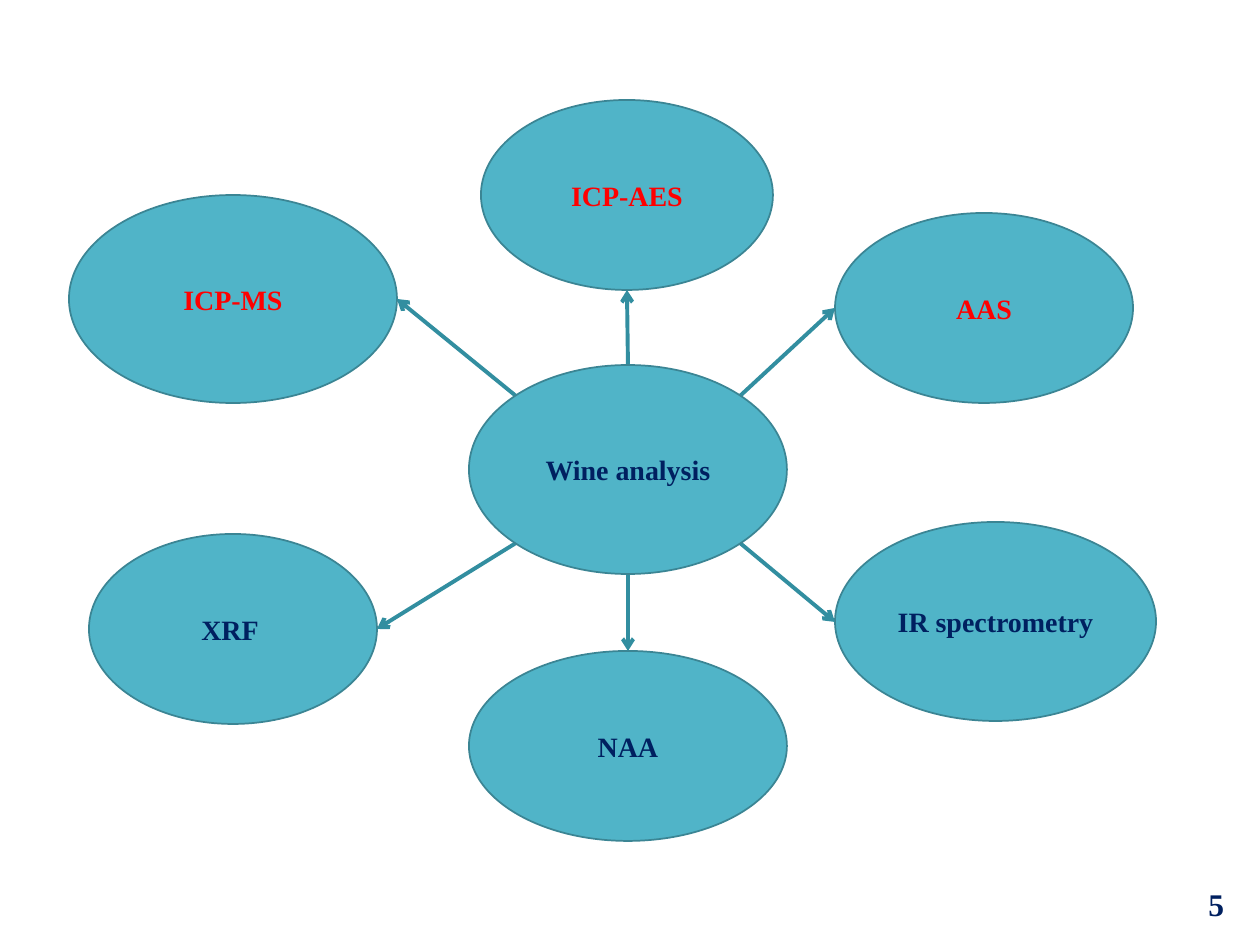
"""Builds a hub-and-spoke slide of wine analysis methods."""
from math import sqrt

from lxml.etree import SubElement
from pptx import Presentation
from pptx.dml.color import RGBColor as Color
from pptx.enum.shapes import MSO_CONNECTOR as Connector, MSO_SHAPE as Shape
from pptx.enum.text import MSO_ANCHOR as Anchor, MSO_AUTO_SIZE as AutoSize, PP_ALIGN as Align
from pptx.oxml.ns import qn
from pptx.util import Emu, Pt

COLOURS = {"fill": "50B4C8", "edge": "3B8594", "arrow": "328EA0", "navy": "002060", "red": "FF0000"}
HUB = (469, 365, 318, 209)
METHODS = [
    ("NAA", "navy", (469, 651, 318, 190), (0, 1)),
    ("XRF ", "navy", (89, 534, 288, 190), (-1, 1)),
    ("AAS", "red", (835, 213, 298, 190), (1, -1)),
    ("ICP-AES", "red", (481, 100, 292, 190), (0, -1)),
    ("ICP-MS", "red", (69, 195, 328, 208), (-1, -1)),
    ("IR spectrometry", "navy", (835, 522, 321, 199), (1, 1)),
]


def px(length):
    return Emu(round(length * 914400 / 126))


def colour(name):
    return Color.from_string(COLOURS[name])


def rim_point(frame, across, down):
    left, top, width, height = frame
    reach = sqrt(across**2 + down**2) * 2
    return round(left + width / 2 + across * width / reach), round(top + height / 2 + down * height / reach)


class Diagram:
    def __init__(self, deck):
        self.font = "Times New Roman"
        self.page = deck.slides.add_slide(deck.slide_layouts[6])

    def add_span(self, para, text, ink, size):
        span = para.add_run()
        span.text = text
        span.font.name = self.font
        span.font.size = Pt(size)
        span.font.bold = True
        span.font.color.rgb = colour(ink)

    def bubble(self, frame, text, ink):
        oval = self.page.shapes.add_shape(Shape.OVAL, *map(px, frame))
        oval.shadow.inherit = False
        oval.fill.solid()
        oval.fill.fore_color.rgb = colour("fill")
        oval.line.color.rgb = colour("edge")
        oval.line.width = Pt(1)
        oval.text_frame.word_wrap = True
        oval.text_frame.vertical_anchor = Anchor.MIDDLE
        para = oval.text_frame.paragraphs[0]
        para.alignment = Align.CENTER
        self.add_span(para, text, ink, 16)

    def arrow(self, start, end):
        arrow = self.page.shapes.add_connector(Connector.STRAIGHT, *map(px, start + end))
        arrow.line.color.rgb = colour("arrow")
        arrow.line.width = Pt(2.25)
        properties = arrow._element.spPr
        SubElement(properties.find(qn("a:ln")), qn("a:tailEnd"), type="arrow")
        SubElement(properties, qn("a:effectLst"))

    def label(self, frame, text, ink, size):
        box = self.page.shapes.add_textbox(*map(px, frame))
        box.text_frame.word_wrap = False
        box.text_frame.auto_size = AutoSize.SHAPE_TO_FIT_TEXT
        self.add_span(box.text_frame.paragraphs[0], text, ink, size)


def main():
    deck = Presentation()
    deck.slide_width, deck.slide_height = px(1260), px(945)
    diagram = Diagram(deck)
    for text, ink, frame, (across, down) in METHODS:
        diagram.bubble(frame, text, ink)
        facing = (-across, 0) if across else (0, -down)
        diagram.arrow(rim_point(HUB, across, down), rim_point(frame, *facing))
    diagram.bubble(HUB, "Wine analysis", "navy")
    diagram.label((1196, 879, 42, 50), "5", "navy", 18)
    deck.save("out.pptx")


if __name__ == "__main__":
    main()
